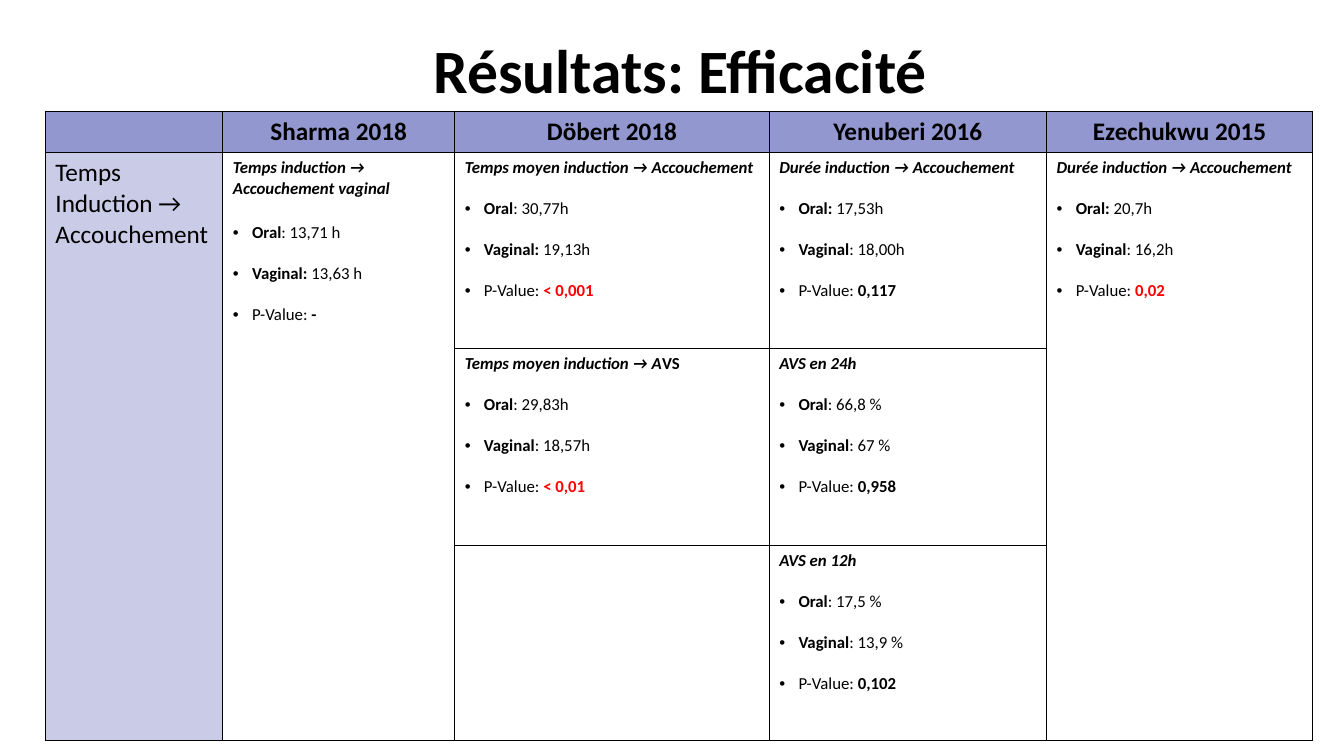
"""Build the slide comparing induction-to-delivery results across four studies."""
import pptx
import pptx.dml.color
import pptx.enum.text
import pptx.oxml
import pptx.oxml.ns
import pptx.util

Inches = pptx.util.Inches
Pt = pptx.util.Pt
CENTER = pptx.enum.text.PP_ALIGN.CENTER

BLACK, WHITE, RED = "000000", "FFFFFF", "FF0000"
HEADER, SIDE = "9297CF", "C9CBE7"
COL_WIDTHS = [1.76, 2.3, 3.12, 2.75, 2.64]
ROW_HEIGHTS = [0.4, 1.94, 1.96, 1.93]
STUDIES = ["Sharma 2018", "Döbert 2018", "Yenuberi 2016", "Ezechukwu 2015"]
MERGED_COLS = [0, 1, 4]
RESULTS = {
    (1, 1): (["Temps induction → Accouchement vaginal"],
             ("Oral", ": 13,71 h"), ("Vaginal: ", "13,63 h"), "-", BLACK),
    (1, 2): (["Temps moyen induction → Accouchement"],
             ("Oral", ": 30,77h"), ("Vaginal: ", "19,13h"), "< 0,001", RED),
    (1, 3): (["Durée induction → Accouchement"],
             ("Oral: ", "17,53h"), ("Vaginal", ": 18,00h"), "0,117", BLACK),
    (1, 4): (["Durée induction → Accouchement"],
             ("Oral: ", "20,7h"), ("Vaginal", ": 16,2h"), "0,02", RED),
    (2, 2): (["Temps moyen induction → A", "VS"],
             ("Oral", ": 29,83h"), ("Vaginal", ": 18,57h"), "< 0,01", RED),
    (2, 3): (["AVS en 24h"],
             ("Oral", ": 66,8 %"), ("Vaginal", ": 67 %"), "0,958", BLACK),
    (3, 3): (["AVS en 12h"],
             ("Oral", ": 17,5 %"), ("Vaginal", ": 13,9 %"), "0,102", BLACK),
}


def rgb(value):
    """Turn a hex string into a colour."""
    return pptx.dml.color.RGBColor.from_string(value)


def add_run(p, text, size, bold=False, italic=False, color=BLACK):
    """Append one formatted run to a paragraph."""
    r = p.add_run()
    r.text = text
    r.font.name = "Calibri"
    r.font.size = Pt(size)
    r.font.bold = bold
    r.font.italic = italic
    r.font.color.rgb = rgb(color)


def style_cell(cell, fill):
    """Fill a cell and draw its four black borders."""
    cell.fill.solid()
    cell.fill.fore_color.rgb = rgb(fill)
    tc_pr = cell._tc.get_or_add_tcPr()
    for i, side in enumerate(["lnL", "lnR", "lnT", "lnB"]):
        tc_pr.insert(i, pptx.oxml.parse_xml(
            f'<a:{side} {pptx.oxml.ns.nsdecls("a")} w="{Pt(1)}"><a:solidFill>'
            f'<a:srgbClr val="{BLACK}"/></a:solidFill></a:{side}>'))


def add_bullet(tf, gap):
    """Add a bulleted paragraph with a gap above it."""
    p = tf.add_paragraph()
    p.space_before = Pt(gap)
    p_pr = p._p.get_or_add_pPr()
    p_pr.set("marL", str(Inches(0.19)))
    p_pr.set("indent", str(-Inches(0.19)))
    p_pr.append(pptx.oxml.parse_xml(
        f'<a:buFont {pptx.oxml.ns.nsdecls("a")} typeface="Arial"/>'))
    p_pr.append(pptx.oxml.parse_xml(
        f'<a:buChar {pptx.oxml.ns.nsdecls("a")} char="•"/>'))
    return p


def fill_result(cell, heading, oral, vaginal, p_value, color, first_gap):
    """Write one study result: heading, two routes and the p-value."""
    tf = cell.text_frame
    for i, text in enumerate(heading):
        add_run(tf.paragraphs[0], text, 12, bold=True, italic=i == 0)
    for (label, value), gap in ((oral, first_gap), (vaginal, 14.6)):
        p = add_bullet(tf, gap)
        add_run(p, label, 12, bold=True)
        add_run(p, value, 12)
    p = add_bullet(tf, 14.6)
    add_run(p, "P-Value: ", 12)
    add_run(p, p_value, 12, bold=True, color=color)


def add_title(s, text):
    """Place and format the slide title."""
    sp = s.shapes.title
    sp.left, sp.top = Inches(0.45), Inches(0.27)
    sp.width, sp.height = Inches(12.6), Inches(0.84)
    tf = sp.text_frame
    tf.auto_size = pptx.enum.text.MSO_AUTO_SIZE.NONE
    tf.vertical_anchor = pptx.enum.text.MSO_ANCHOR.TOP
    p = tf.paragraphs[0]
    p.alignment = CENTER
    add_run(p, text, 44, bold=True)


def add_results_table(s):
    """Add the table of results by study."""
    table = s.shapes.add_table(
        len(ROW_HEIGHTS), len(COL_WIDTHS), Inches(0.45), Inches(1.11),
        Inches(sum(COL_WIDTHS)), Inches(sum(ROW_HEIGHTS))).table
    for column, width in zip(table.columns, COL_WIDTHS):
        column.width = Inches(width)
    for row, height in zip(table.rows, ROW_HEIGHTS):
        row.height = Inches(height)
    for i in range(len(ROW_HEIGHTS)):
        for j in range(len(COL_WIDTHS)):
            fill = HEADER if i == 0 else SIDE if j == 0 else WHITE
            style_cell(table.cell(i, j), fill)
    for j in MERGED_COLS:
        table.cell(1, j).merge(table.cell(3, j))
    for j, study in enumerate(STUDIES, 1):
        p = table.cell(0, j).text_frame.paragraphs[0]
        p.alignment = CENTER
        add_run(p, study, 18, bold=True)
    tf = table.cell(1, 0).text_frame
    add_run(tf.paragraphs[0], "Temps Induction →", 18)
    add_run(tf.add_paragraph(), "Accouchement", 18)
    for (i, j), result in RESULTS.items():
        fill_result(table.cell(i, j), *result, first_gap=17 if j == 1 else 14.6)


def main():
    """Build and save the presentation."""
    prs = pptx.Presentation()
    prs.slide_width, prs.slide_height = Inches(13.33), Inches(7.5)
    s = prs.slides.add_slide(prs.slide_layouts[5])
    add_results_table(s)
    add_title(s, "Résultats: Efficacité")
    prs.save("out.pptx")


if __name__ == "__main__":
    main()
